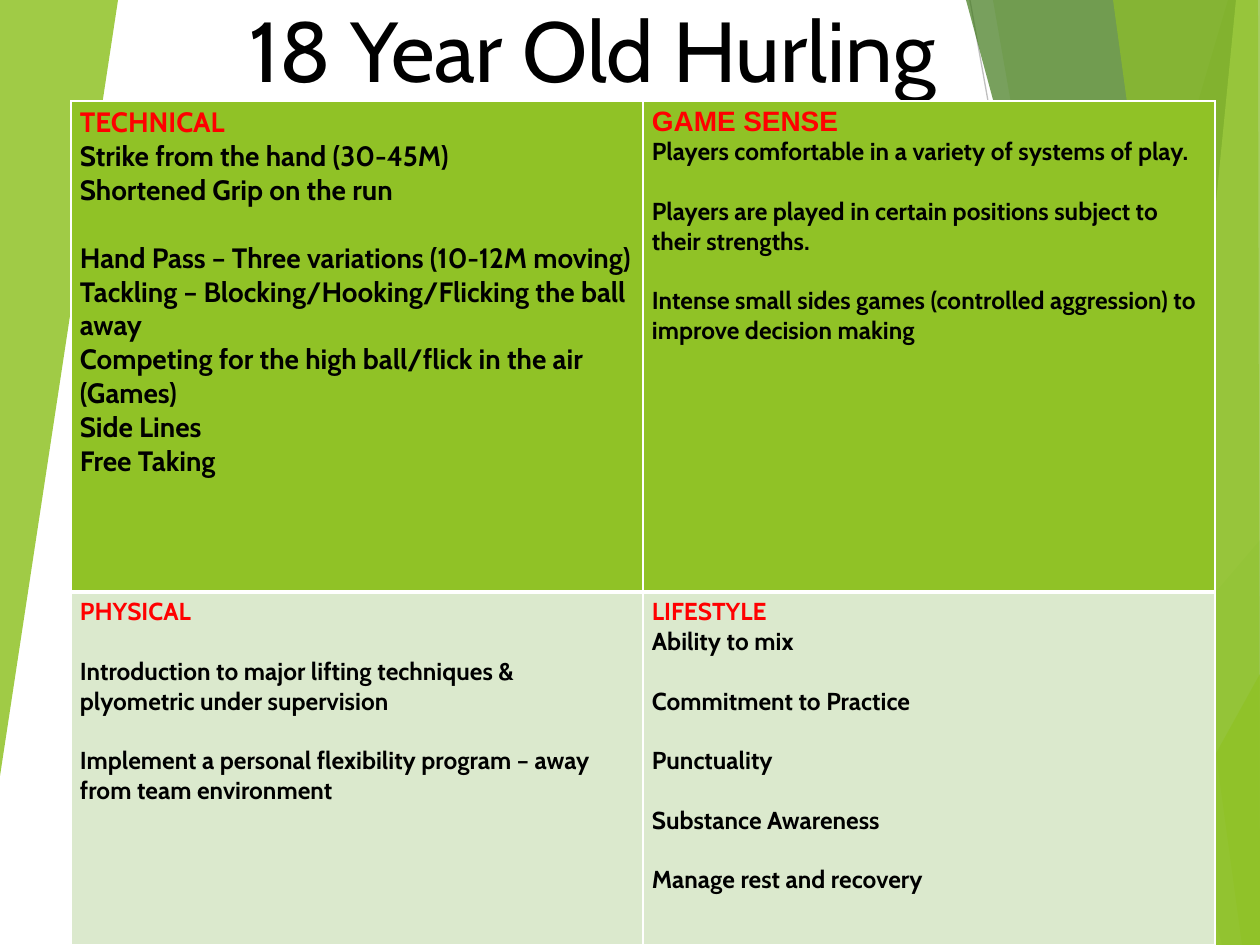
"""Build the 18 Year Old Hurling slide with its four-part coaching table."""
from lxml.etree import SubElement
from pptx import Presentation
from pptx.dml.color import RGBColor
from pptx.enum.text import MSO_ANCHOR, MSO_AUTO_SIZE, PP_ALIGN
from pptx.enum.shapes import MSO_CONNECTOR
from pptx.oxml import parse_xml
from pptx.oxml.ns import nsdecls, qn
from pptx.util import Emu, Pt

SCALE = 914400 / 126
WIDTH, HEIGHT = 1260, 945
COLORS = {
    "green": "90C226", "leaf": "54A021", "forest": "3F7819", "lime": "C0E474",
    "pale": "DBE9CD", "white": "FFFFFF", "black": "000000", "red": "FF0000",
    "light_gray": "D9D9D9", "gray": "BFBFBF",
}


def px(length):
    """Convert pixels to EMU."""
    return Emu(round(length * SCALE))


def write(para, text, size=14, color="black", font="Cabin", bold=True, align=PP_ALIGN.LEFT, before=0):
    """Put one formatted span of text into a paragraph."""
    para.alignment = align
    para.space_before = Pt(before)
    span = para.add_run()
    span.text = text
    span.font.name = font
    span.font.size = Pt(size)
    span.font.bold = bold
    span.font.color.rgb = RGBColor.from_string(COLORS[color])


deck = Presentation()
deck.slide_width, deck.slide_height = px(WIDTH), px(HEIGHT)
page = deck.slides.add_slide(deck.slide_layouts[5])

for start, end, color in [
    ((707, HEIGHT), (WIDTH, 576), "light_gray"),
    ((970, 0), (1139, HEIGHT), "gray"),
]:
    line = page.shapes.add_connector(MSO_CONNECTOR.STRAIGHT, *map(px, start + end))
    line.line.color.rgb = RGBColor.from_string(COLORS[color])
    line.line.width = Pt(0.75)
    SubElement(line.element.spPr, qn("a:effectLst"))

right_edge = [(WIDTH, HEIGHT), (WIDTH, 0)]
facets = [
    ("green", 30, [(1228, 0), (950, HEIGHT)] + right_edge),
    ("green", 20, [(993, 0), (1158, HEIGHT)] + right_edge),
    ("leaf", 72, [(915, HEIGHT), (WIDTH, 540), (WIDTH, HEIGHT)]),
    ("forest", 70, [(966, 0), (1222, HEIGHT)] + right_edge),
    ("lime", 70, [(1236, 0), (1143, HEIGHT)] + right_edge),
    ("green", 65, [(1113, 0), (1242, HEIGHT), (WIDTH, HEIGHT), (1258, 0)]),
    ("green", 80, [(1110, HEIGHT), (WIDTH, 674), (WIDTH, HEIGHT)]),
    ("green", 85, [(0, 0), (118, 0), (0, 776)]),
]
for color, opacity, points in facets:
    builder = page.shapes.build_freeform(*points[0], scale=SCALE)
    builder.add_line_segments(points[1:], close=True)
    facet = builder.convert_to_shape()
    facet.shadow.inherit = False
    facet.line.fill.background()
    facet.fill.solid()
    facet.fill.fore_color.rgb = RGBColor.from_string(COLORS[color])
    tint = facet.element.spPr.find(qn("a:solidFill")).find(qn("a:srgbClr"))
    SubElement(tint, qn("a:alpha"), val=str(opacity * 1000))

title = page.shapes.title
title.left, title.top, title.width, title.height = map(px, (-44, 16, 992, 90))
title.text_frame.auto_size = MSO_AUTO_SIZE.NONE
title.text_frame.word_wrap = True
title.text_frame.vertical_anchor = MSO_ANCHOR.BOTTOM
write(title.text_frame.paragraphs[0], "18 Year Old Hurling", size=48.6, bold=False, align=PP_ALIGN.RIGHT)
title.element.getparent().append(title.element)

sections = [
    [
        ("TECHNICAL", 16, "Cabin", 16, [
            ("Strike from the hand (30-45M)", False),
            ("Shortened Grip on the run", False),
            ("Hand Pass – Three variations (10-12M moving)", True),
            ("Tackling – Blocking/Hooking/Flicking the ball away", False),
            ("Competing for the high ball/flick in the air (Games)", False),
            ("Side Lines", False),
            ("Free Taking", False),
        ]),
        ("GAME SENSE", 16, "Arial", 14, [
            ("Players comfortable in a variety of systems of play.", False),
            ("Players are played in certain positions subject to their strengths.", True),
            ("Intense small sides games (controlled aggression) to improve decision making", True),
        ]),
    ],
    [
        ("PHYSICAL", 14, "Cabin", 14, [
            ("Introduction to major lifting techniques & plyometric under supervision", True),
            ("Implement a personal flexibility program – away from team environment", True),
        ]),
        ("LIFESTYLE", 14, "Cabin", 14, [
            ("Ability to mix", False),
            ("Commitment to Practice", True),
            ("Punctuality", True),
            ("Substance Awareness", True),
            ("Manage rest and recovery", True),
        ]),
    ],
]
row_heights = [491, 353]
row_fills = ["green", "pale"]
row_borders = [{"L": 1, "R": 1, "T": 1, "B": 3}, {"L": 1, "R": 1, "T": 3, "B": 1}]
table = page.shapes.add_table(2, 2, px(71), px(101), px(1144), px(sum(row_heights))).table
table.first_row = table.horz_banding = False
for column in table.columns:
    column.width = px(572)

for row, row_sections in enumerate(sections):
    table.rows[row].height = px(row_heights[row])
    for column, (heading, heading_size, heading_font, size, items) in enumerate(row_sections):
        cell = table.cell(row, column)
        cell.margin_left = cell.margin_right = px(9)
        cell.margin_top = cell.margin_bottom = px(5)
        properties = cell._tc.get_or_add_tcPr()
        for side, width in row_borders[row].items():
            properties.append(parse_xml(
                f'<a:ln{side} {nsdecls("a")} w="{Pt(width)}"><a:solidFill>'
                f'<a:srgbClr val="{COLORS["white"]}"/></a:solidFill></a:ln{side}>'
            ))
        cell.fill.solid()
        cell.fill.fore_color.rgb = RGBColor.from_string(COLORS[row_fills[row]])
        frame = cell.text_frame
        write(frame.paragraphs[0], heading, size=heading_size, color="red", font=heading_font)
        for text, spaced in items:
            write(frame.add_paragraph(), text, size=size, before=round(size * 1.215, 1) if spaced else 0)

deck.save("out.pptx")
